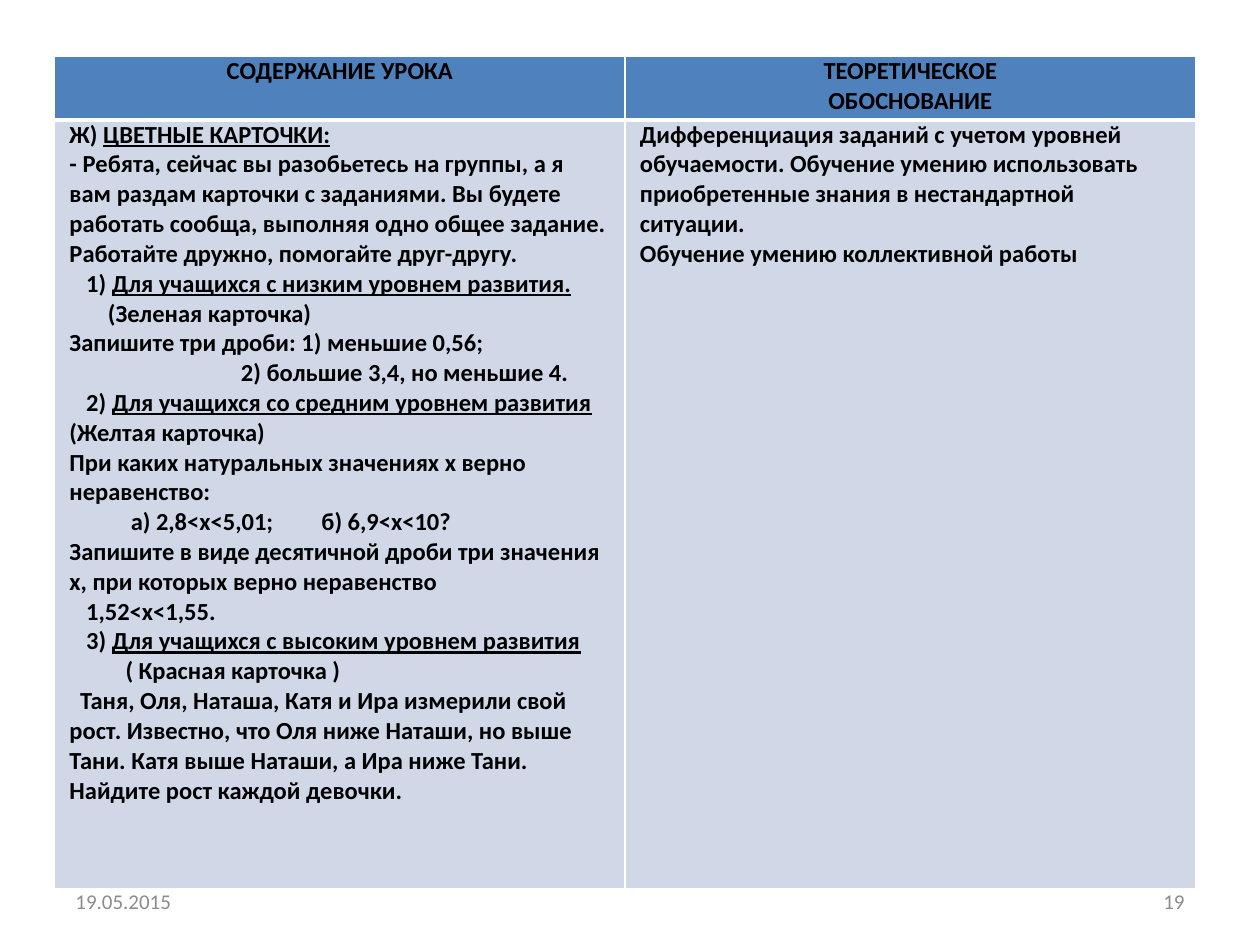
from lxml import etree
from pptx import Presentation
from pptx import util as u
from pptx.dml.color import RGBColor
from pptx.enum import text
from pptx.oxml import ns

BLUE = RGBColor(0x4F, 0x81, 0xBD)
PALE = RGBColor(0xD0, 0xD8, 0xE8)
WHITE = RGBColor(0xFF, 0xFF, 0xFF)
BLACK = RGBColor(0, 0, 0)
GRAY = RGBColor(0x8C, 0x8C, 0x8C)
FACE = "Calibri"
LEFT = text.PP_ALIGN.LEFT
MID = text.PP_ALIGN.CENTER
RIGHT = text.PP_ALIGN.RIGHT

HEADS = [["СОДЕРЖАНИЕ УРОКА"], ["ТЕОРЕТИЧЕСКОЕ", "ОБОСНОВАНИЕ"]]
LESSON = [
    (0, "Ж) ", "ЦВЕТНЫЕ КАРТОЧКИ:"),
    (0, "- Ребята, сейчас вы разобьетесь на группы, а я вам раздам карточки с заданиями. "
        "Вы будете работать сообща, выполняя одно общее задание. "
        "Работайте дружно, помогайте друг-другу."),
    (9.5, "1) ", "Для учащихся с низким уровнем развития."),
    (22, "(Зеленая карточка)"),
    (0, "Запишите три дроби: 1) меньшие 0,56;"),
    (98, "2) большие 3,4, но меньшие 4."),
    (9.5, "2) ", "Для учащихся со средним уровнем развития"),
    (0, "(Желтая карточка)"),
    (0, "При каких натуральных значениях х верно неравенство:"),
    (35, "а) 2,8<x<5,01;\tб) 6,9<x<10?"),
    (0, "Запишите в виде десятичной дроби три значения х, при которых верно неравенство"),
    (9.5, "1,52<x<1,55."),
    (9.5, "3) ", "Для учащихся с высоким уровнем развития"),
    (32, "( Красная карточка )"),
    (6, "Таня, Оля, Наташа, Катя и Ира измерили свой рост. "
        "Известно, что Оля ниже Наташи, но выше Тани. "
        "Катя выше Наташи, а Ира ниже Тани. Найдите рост каждой девочки."),
]
THEORY = [
    (0, "Дифференциация заданий с учетом уровней обучаемости. Обучение умению использовать "
        "приобретенные знания в нестандартной ситуации."),
    (0, "Обучение умению коллективной работы"),
]


def style(font, size, color, bold=False):
    font.name = FACE
    font.size = u.Pt(size)
    font.color.rgb = color
    font.bold = bold


def indent(para, first):
    props = para._p.get_or_add_pPr()
    props.set("marL", "0")
    props.set("indent", str(u.Pt(first)))


def add_tab(para, pos):
    props = para._p.get_or_add_pPr()
    tabs = etree.SubElement(props, ns.qn("a:tabLst"))
    etree.SubElement(tabs, ns.qn("a:tab"), pos=str(u.Pt(pos)), algn="l")


def border(cell, side, width):
    props = cell._tc.get_or_add_tcPr()
    line = etree.SubElement(props, ns.qn("a:ln" + side), w=str(u.Pt(width)))
    fill = etree.SubElement(line, ns.qn("a:solidFill"))
    etree.SubElement(fill, ns.qn("a:srgbClr"), val=str(WHITE))


def fill_cell(cell, lines, color, inset, align, top, low):
    for side, width in (("L", 1), ("R", 1), ("T", top), ("B", low)):
        border(cell, side, width)
    cell.fill.solid()
    cell.fill.fore_color.rgb = color
    cell.margin_left = cell.margin_right = u.Pt(inset)
    cell.margin_top = cell.margin_bottom = 0
    frame = cell.text_frame
    for i, (first, *parts) in enumerate(lines):
        para = frame.add_paragraph() if i else frame.paragraphs[0]
        para.alignment = align
        if first:
            indent(para, first)
        if "\t" in parts[0]:
            add_tab(para, 148.5)
        for j, part in enumerate(parts):
            run = para.add_run()
            run.text = part
            style(run.font, 14, BLACK, True)
            run.font.underline = j == 1


def add_grid(slide):
    grid = slide.shapes.add_table(2, 2, u.Pt(31.25), u.Pt(32), u.Pt(652), u.Pt(476)).table
    for row, high in zip(grid.rows, (36.5, 439.5)):
        row.height = u.Pt(high)
    for col, lines in enumerate(HEADS):
        heads = [(0, line) for line in lines]
        fill_cell(grid.cell(0, col), heads, BLUE, 5, MID, 1, 3)
    for col, lines in enumerate((LESSON, THEORY)):
        fill_cell(grid.cell(1, col), lines, PALE, 8.5, LEFT, 3, 1)


def add_foot(slide, left, words, align):
    box = slide.shapes.add_textbox(u.Pt(left), u.Pt(500.5), u.Pt(168), u.Pt(28.75))
    frame = box.text_frame
    frame.word_wrap = True
    frame.vertical_anchor = text.MSO_ANCHOR.MIDDLE
    frame.text = words
    para = frame.paragraphs[0]
    para.alignment = align
    style(para.runs[0].font, 12, GRAY)


def main():
    deck = Presentation()
    deck.slide_width, deck.slide_height = u.Pt(720), u.Pt(540)
    slide = deck.slides.add_slide(deck.slide_layouts[6])
    add_grid(slide)
    add_foot(slide, 36, "19.05.2015", LEFT)
    add_foot(slide, 516, "19", RIGHT)
    deck.save("out.pptx")


if __name__ == "__main__":
    main()
